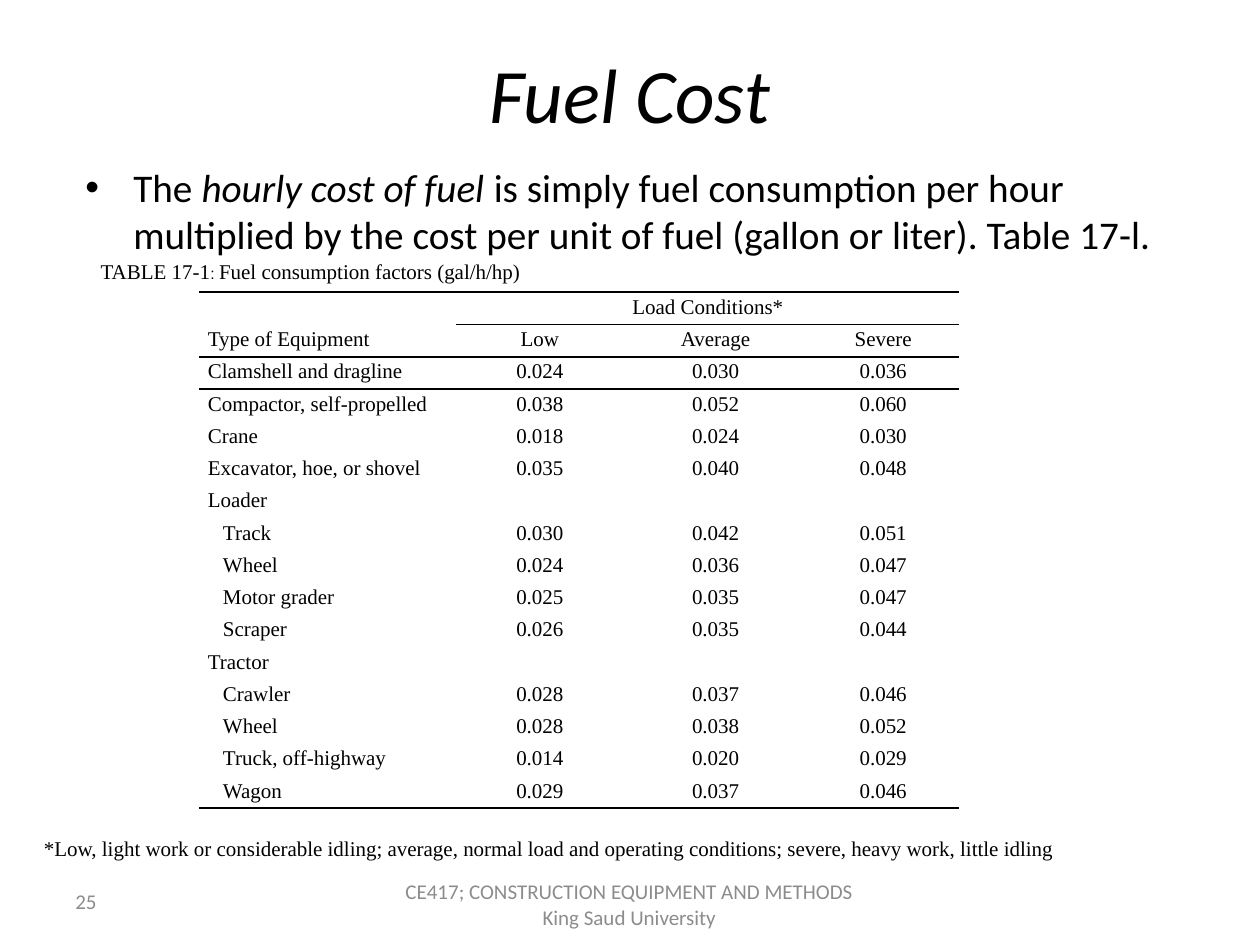
from lxml.etree import SubElement
from pptx import Presentation
from pptx.dml.color import RGBColor
from pptx.enum.text import MSO_ANCHOR, PP_ALIGN
from pptx.oxml.ns import qn
from pptx.util import Inches, Pt

BLACK, GREY = "000000", "8C8C8C"
SERIF, SANS = "Times New Roman", "Calibri"
NO_STYLE = "{2D5ABB26-0587-4C30-8999-92F81FD0307C}"
CELL_FORMAT = {"name": SERIF, "size": 12}

COLUMN_WIDTHS = [2.04, 1.33, 1.46, 1.2]
ROWS = [
    ("", "", "Load Conditions*", ""),
    ("Type of Equipment", "Low", "Average", "Severe"),
    ("Clamshell and dragline", "0.024", "0.030", "0.036"),
    ("Compactor, self-propelled", "0.038", "0.052", "0.060"),
    ("Crane", "0.018", "0.024", "0.030"),
    ("Excavator, hoe, or shovel", "0.035", "0.040", "0.048"),
    ("Loader", "", "", ""),
    ("Track", "0.030", "0.042", "0.051"),
    ("Wheel", "0.024", "0.036", "0.047"),
    ("Motor grader", "0.025", "0.035", "0.047"),
    ("Scraper", "0.026", "0.035", "0.044"),
    ("Tractor", "", "", ""),
    ("Crawler", "0.028", "0.037", "0.046"),
    ("Wheel", "0.028", "0.038", "0.052"),
    ("Truck, off-highway", "0.014", "0.020", "0.029"),
    ("Wagon", "0.029", "0.037", "0.046"),
]
SUB_ITEMS = {"Track", "Wheel", "Motor grader", "Scraper", "Crawler",
             "Truck, off-highway", "Wagon"}


def rgb(color):
    return RGBColor.from_string(color)


def add_span(para, text, name=SANS, size=12, color=BLACK, italic=False):
    span = para.add_run()
    span.text = text
    values = {"name": name, "size": Pt(size), "italic": italic}
    for key, value in values.items():
        setattr(span.font, key, value)
    span.font.color.rgb = rgb(color)


def add_text(page, box, spans, align=PP_ALIGN.LEFT, anchor=MSO_ANCHOR.TOP):
    """Place one paragraph of (text, format) spans in a box and return it."""
    frame = page.shapes.add_textbox(*map(Inches, box)).text_frame
    frame.word_wrap = True
    frame.vertical_anchor = anchor
    para = frame.paragraphs[0]
    para.alignment = align
    for text, values in spans:
        add_span(para, text, **values)
    return para


def add_title(page, box):
    add_text(page, box, [("Fuel Cost", {"size": 44, "italic": True})],
             PP_ALIGN.CENTER, MSO_ANCHOR.MIDDLE)


def add_body(page, box):
    plain = {"size": 22.4}
    para = add_text(page, box, [
        ("The ", plain),
        ("hourly cost of fuel", {**plain, "italic": True}),
        (" is simply fuel consumption per hour multiplied by the cost per unit "
         "of fuel (gallon or liter). Table 17-l.", plain),
    ])
    properties = para._p.get_or_add_pPr()
    properties.set("marL", str(Inches(0.38)))
    properties.set("indent", str(-Inches(0.38)))
    SubElement(properties, qn("a:buFont"), typeface="Arial")
    SubElement(properties, qn("a:buChar"), char="•")


def set_border(cell, side, width):
    line = SubElement(cell._tc.get_or_add_tcPr(), qn(f"a:ln{side}"), w=str(Pt(width)))
    fill = SubElement(line, qn("a:solidFill"))
    SubElement(fill, qn("a:srgbClr"), val=BLACK)


def cell_borders(row, column):
    """Return the (side, points) rules drawn around a cell."""
    last = len(ROWS) - 1
    borders = []
    if row == 0:
        borders.append(("T", 1.5))
    elif row == 2 or (row == 1 and column > 0):
        borders.append(("T", 1))
    if row == 1 or (row == 0 and column > 0):
        borders.append(("B", 1))
    elif row == last:
        borders.append(("B", 1.5))
    return borders


def fill_cell(cell, text, row, column):
    margins = {"margin_left": 0.07, "margin_right": 0.07,
               "margin_top": 0, "margin_bottom": 0}
    for key, value in margins.items():
        setattr(cell, key, Inches(value))
    for side, width in cell_borders(row, column):
        set_border(cell, side, width)
    cell.fill.background()
    para = cell.text_frame.paragraphs[0]
    para.line_spacing = 1.15
    if column > 0 and row > 0:
        para.alignment = PP_ALIGN.CENTER
    if text in SUB_ITEMS:
        para._p.get_or_add_pPr().set("marL", str(Inches(0.12)))
    if text:
        add_span(para, text, **CELL_FORMAT)
    else:
        SubElement(para._p, qn("a:endParaRPr"), sz="1200")


def add_fuel_table(page, box):
    table = page.shapes.add_table(len(ROWS), len(COLUMN_WIDTHS),
                                  *map(Inches, box)).table
    table.first_row = table.horz_banding = False
    table._tbl.tblPr.find(qn("a:tableStyleId")).text = NO_STYLE
    for column, width in zip(table.columns, COLUMN_WIDTHS):
        column.width = Inches(width)
    for row, texts in enumerate(ROWS):
        table.rows[row].height = Inches(box[3] / len(ROWS))
        for column, text in enumerate(texts):
            fill_cell(table.cell(row, column), text, row, column)


def add_caption(page, box):
    add_text(page, box, [
        ("TABLE 17-1", CELL_FORMAT),
        (": ", {"name": "Arial", "size": 9}),
        ("Fuel consumption factors (gal/h/hp)", CELL_FORMAT),
    ], anchor=MSO_ANCHOR.MIDDLE)


def add_footnote(page, box):
    add_text(page, box, [
        ("*Low, light work or considerable idling; average, normal load and "
         "operating conditions; severe, heavy work, little idling", CELL_FORMAT)])


def add_footer(page, number_box, course_box):
    grey = {"color": GREY}
    add_text(page, number_box, [("25", grey)], anchor=MSO_ANCHOR.MIDDLE)
    add_text(page, course_box, [
        ("CE417; CONSTRUCTION EQUIPMENT AND METHODS King Saud University", grey)],
        PP_ALIGN.CENTER, MSO_ANCHOR.MIDDLE)


def main():
    deck = Presentation()
    deck.slide_width, deck.slide_height = Inches(10), Inches(7.5)
    page = deck.slides.add_slide(deck.slide_layouts[6])
    add_title(page, (0.5, 0.3, 9, 0.87))
    add_body(page, (0.58, 1.25, 9, 0.75))
    add_fuel_table(page, (1.58, 2.32, 6.03, 4.1))
    add_caption(page, (0.7, 2, 5.25, 0.3))
    add_footnote(page, (0.25, 6.58, 9.25, 0.3))
    add_footer(page, (0.5, 6.95, 2.33, 0.4), (3.08, 7, 3.83, 0.35))
    deck.save("out.pptx")


if __name__ == "__main__":
    main()
